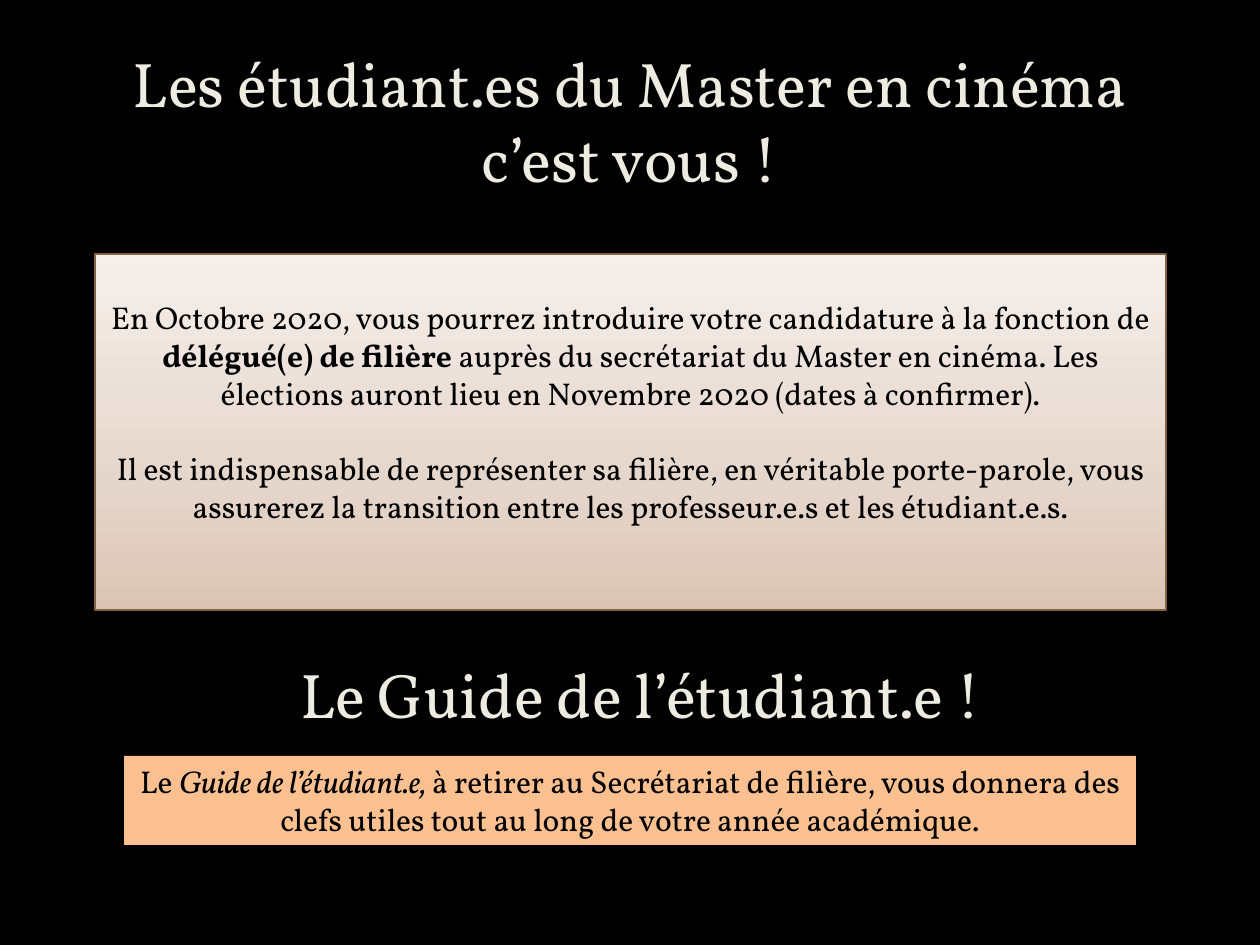
from copy import deepcopy

from pptx import Presentation
from pptx.dml.color import RGBColor
from pptx.enum.shapes import MSO_SHAPE
from pptx.enum.text import MSO_ANCHOR, PP_ALIGN
from pptx.oxml.ns import qn
from pptx.util import Emu, Pt

PIXELS_PER_INCH = 126
FONT = "Vollkorn"
BLACK = "000000"
CREAM = "EEECE1"
ORANGE = "FAC090"
BROWN = "826445"
PANEL_STOPS = [(0, "F5EFEB"), (0.65, "E5D6CB"), (1, "DBC4B4")]


def px(value):
    return Emu(round(value * 914400 / PIXELS_PER_INCH))


def color(hex_string):
    return RGBColor.from_string(hex_string)


def write_text(shape, paragraphs, size, text_color, top_inset=6, gap=0):
    """Fill a shape with paragraphs, each a list of (text, style) runs."""
    frame = shape.text_frame
    frame.word_wrap = True
    frame.vertical_anchor = MSO_ANCHOR.TOP
    frame.margin_top = px(top_inset)
    for index, runs in enumerate(paragraphs):
        paragraph = frame.paragraphs[0] if index == 0 else frame.add_paragraph()
        paragraph.alignment = PP_ALIGN.CENTER
        paragraph.space_before = Pt(gap if index else 0)
        paragraph.font.name = FONT
        paragraph.font.size = Pt(size)
        paragraph.font.color.rgb = color(text_color)
        for text, style in runs:
            run = paragraph.add_run()
            run.text = text
            if style == "bold":
                run.font.bold = True
            elif style == "italic":
                run.font.italic = True


def add_heading(slide, box, lines):
    shape = slide.shapes.add_textbox(*map(px, box))
    write_text(shape, [[(lines[0], None)]], 36, CREAM)
    paragraph = shape.text_frame.paragraphs[0]
    for line in lines[1:]:
        paragraph.add_line_break()
        paragraph.add_run().text = line


def add_panel(slide, box):
    shape = slide.shapes.add_shape(MSO_SHAPE.RECTANGLE, *map(px, box))
    shape.shadow.inherit = False
    return shape


def fill_gradient(shape, stops):
    """Apply a gradient running from top to bottom."""
    shape.fill.gradient()
    shape.fill.gradient_angle = 270
    stop_list = shape.element.find(".//" + qn("a:gsLst"))
    while len(stop_list) < len(stops):
        stop_list.append(deepcopy(stop_list[-1]))
    for stop, (position, stop_color) in zip(shape.fill.gradient_stops, stops):
        stop.position = position
        stop.color.rgb = color(stop_color)


def add_election_panel(slide, box):
    panel = add_panel(slide, box)
    fill_gradient(panel, PANEL_STOPS)
    panel.line.color.rgb = color(BROWN)
    panel.line.width = Pt(0.75)
    paragraphs = [
        [
            ("En Octobre 2020, vous pourrez introduire votre candidature "
             "à la fonction de ", None),
            ("délégué(e) de filière", "bold"),
            (" auprès du secrétariat du Master en cinéma. Les élections "
             "auront lieu en Novembre 2020 (dates à confirmer).", None),
        ],
        [
            ("Il est indispensable de représenter sa filière, en véritable "
             "porte-parole, vous assurerez la transition entre les "
             "professeur.e.s et les étudiant.e.s.", None),
        ],
    ]
    write_text(panel, paragraphs, 18, BLACK, top_inset=44, gap=21.5)


def add_guide_panel(slide, box):
    panel = add_panel(slide, box)
    panel.fill.solid()
    panel.fill.fore_color.rgb = color(ORANGE)
    panel.line.fill.background()
    runs = [
        ("Le ", None),
        ("Guide de l’étudiant.e, ", "italic"),
        ("à retirer au Secrétariat de filière, vous donnera des clefs utiles "
         "tout au long de votre année académique.", None),
    ]
    write_text(panel, [runs], 18, BLACK)


def main():
    presentation = Presentation()
    presentation.slide_width = px(1260)
    presentation.slide_height = px(945)
    slide = presentation.slides.add_slide(presentation.slide_layouts[6])
    slide.background.fill.solid()
    slide.background.fill.fore_color.rgb = color(BLACK)

    add_heading(slide, (63, 38, 1134, 107),
                ["Les étudiant.es du Master en cinéma", "c’est vous !"])
    add_election_panel(slide, (95, 254, 1071, 356))
    add_heading(slide, (74, 649, 1134, 107), ["Le Guide de l’étudiant.e !"])
    add_guide_panel(slide, (124, 756, 1012, 89))
    presentation.save("out.pptx")


if __name__ == "__main__":
    main()
